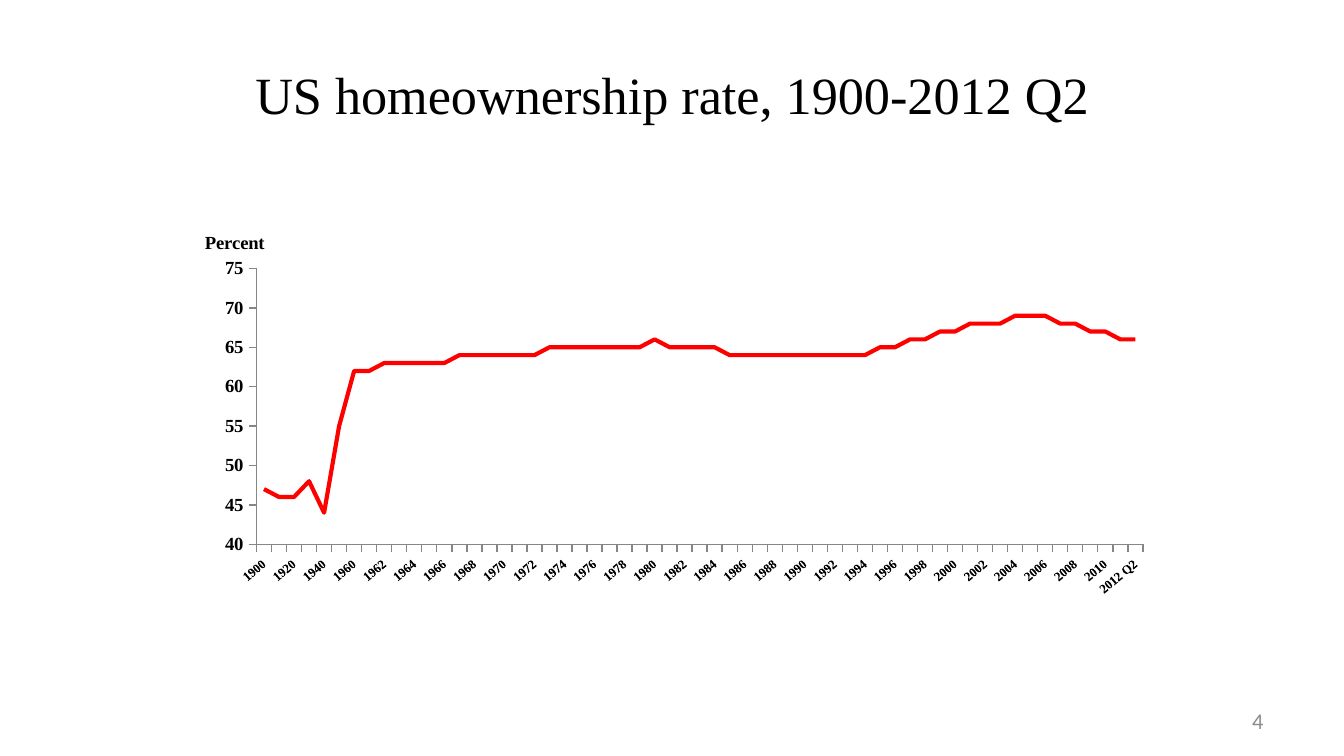
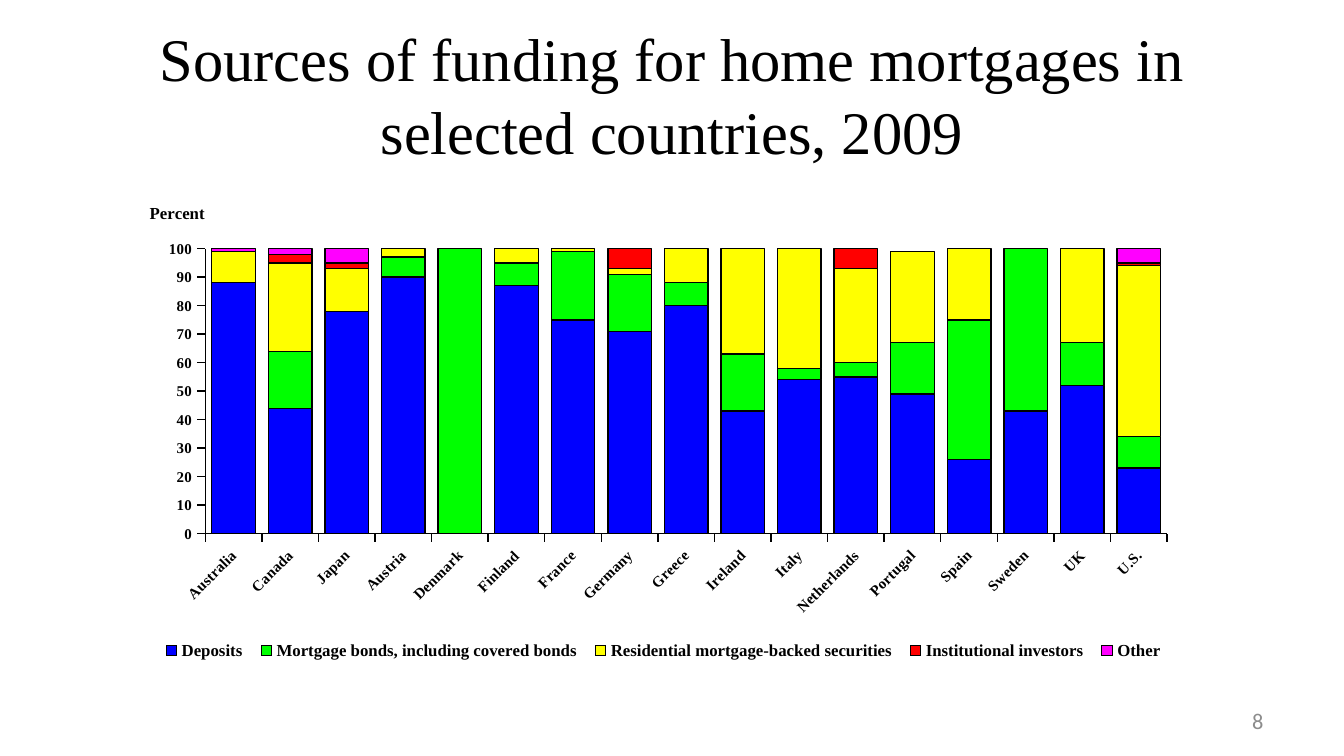
from dataclasses import dataclass

from lxml import etree
from pptx import Presentation
from pptx.chart.data import CategoryChartData
from pptx.dml.color import RGBColor
from pptx.enum.chart import XL_CHART_TYPE, XL_LEGEND_POSITION, XL_TICK_MARK
from pptx.enum.text import MSO_ANCHOR, MSO_AUTO_SIZE, PP_ALIGN
from pptx.oxml.ns import qn
from pptx.util import Cm, Pt

LINE = XL_CHART_TYPE.LINE
STACKED = XL_CHART_TYPE.COLUMN_STACKED
BOTTOM = XL_LEGEND_POSITION.BOTTOM
OUTSIDE = XL_TICK_MARK.OUTSIDE
NO_TICK = XL_TICK_MARK.NONE
MIDDLE = MSO_ANCHOR.MIDDLE
NO_AUTOFIT = MSO_AUTO_SIZE.NONE
CENTER, RIGHT = PP_ALIGN.CENTER, PP_ALIGN.RIGHT
TITLE_ONLY = 5


@dataclass(frozen=True)
class Theme:
    serif: str = "Times New Roman"
    sans: str = "Calibri"
    ink: str = "000000"
    number: str = "8C8C8C"
    axis: str = "868686"
    red: str = "FF0000"
    blue: str = "0000FF"
    green: str = "00FF00"
    yellow: str = "FFFF00"
    magenta: str = "FF00FF"
    rate_title: float = 28
    funding_title: float = 32.4
    page: float = 12
    rate_labels: float = 10
    rate_years: float = 7
    funding_labels: float = 8
    funding_captions: float = 9
    rate_line: float = 2.25
    thin_line: float = 0.75


THEME = Theme()

# Boxes in centimetres: left, top, width, height
SLIDE_SIZE = (25.4, 14.29)
TITLE_BOX = (1.27, 0.58, 22.86, 2.39)
PAGE_BOX = (18.21, 13.25, 5.92, 0.76)
RATE_BOX = (3.81, 4.29, 18.21, 6.98)
FUNDING_BOX = (2.34, 3.5, 20.52, 9.68)

# Homeownership: every census year to 1950, then every year
YEARS = [str(y) for y in (*range(1900, 1960, 10), *range(1960, 2012))] + ["2012 Q2"]
RATES = [
    47, 46, 46, 48, 44, 55,
    62, 62, 63, 63, 63, 63, 63, 64, 64, 64,
    64, 64, 64, 65, 65, 65, 65, 65, 65, 65,
    66, 65, 65, 65, 65, 64, 64, 64, 64, 64,
    64, 64, 64, 64, 64, 65, 65, 66, 66, 67,
    67, 68, 68, 68, 69, 69, 69, 68, 68, 67,
    67, 66, 66,
]

COUNTRIES = [
    "Australia", "Canada", "Japan", "Austria", "Denmark", "Finland",
    "France", "Germany", "Greece", "Ireland", "Italy", "Netherlands",
    "Portugal", "Spain", "Sweden", "UK", "U.S.",
]
FUNDING = [
    ("Deposits", THEME.blue,
     [88, 44, 78, 90, 0, 87, 75, 71, 80, 43, 54, 55, 49, 26, 43, 52, 23]),
    ("Mortgage bonds, including covered bonds", THEME.green,
     [0, 20, 0, 7, 100, 8, 24, 20, 8, 20, 4, 5, 18, 49, 57, 15, 11]),
    ("Residential mortgage-backed securities", THEME.yellow,
     [11, 31, 15, 3, 0, 6, 2, 2, 12, 37, 42, 33, 32, 25, 0, 34, 60]),
    ("Institutional investors", THEME.red,
     [0, 3, 2, 0, 0, 0, 0, 8, 0, 0, 0, 8, 0, 0, 0, 0, 1]),
    ("Other", THEME.magenta,
     [1, 3, 6, 0, 0, 0, 0, 0, 0, 0, 0, 0, 0, 0, 0, 0, 6]),
]


def lengths(box):
    return [Cm(value) for value in box]


def style_font(font, size, face=THEME.serif, color=THEME.ink, bold=False):
    font.name, font.size, font.bold = face, Pt(size), bold
    font.color.rgb = RGBColor.from_string(color)


def style_line(line, color, width):
    line.color.rgb = RGBColor.from_string(color)
    line.width = Pt(width)


def fill_text(frame, text, align):
    frame.text = text
    frame.word_wrap = True
    frame.auto_size = NO_AUTOFIT
    frame.vertical_anchor = MIDDLE
    frame.paragraphs[0].alignment = align
    return frame.paragraphs[0].runs[0].font


def add_titled_slide(prs, title, title_size, page):
    slide = prs.slides.add_slide(prs.slide_layouts[TITLE_ONLY])
    heading = slide.shapes.title
    heading.left, heading.top, heading.width, heading.height = lengths(TITLE_BOX)
    style_font(fill_text(heading.text_frame, title, CENTER), title_size)

    page_box = slide.shapes.add_textbox(*lengths(PAGE_BOX))
    page_font = fill_text(page_box.text_frame, page, RIGHT)
    style_font(page_font, THEME.page, THEME.sans, THEME.number)
    return slide


def set_layout(parent, index, inner=False, **fractions):
    """Fix a chart part at fractions of the chart box."""
    for old in parent.findall(qn("c:layout")):
        parent.remove(old)
    layout = etree.Element(qn("c:layout"))
    manual = etree.SubElement(layout, qn("c:manualLayout"))
    settings = {"layoutTarget": "inner"} if inner else {}
    settings.update(xMode="edge", yMode="edge", **fractions)
    for tag, value in settings.items():
        etree.SubElement(manual, qn("c:" + tag)).set("val", str(value))
    parent.insert(index, layout)


def add_percent_chart(slide, box, kind, categories, series, size, plot):
    data = CategoryChartData(number_format="0")
    data.categories = categories
    for name, _, values in series:
        data.add_series(name, values)
    chart = slide.shapes.add_chart(kind, *lengths(box), data).chart
    chart.has_title = chart.has_legend = False
    style_font(chart.font, size, bold=True)
    chart.plots[0].vary_by_categories = False
    set_layout(chart._chartSpace.chart.plotArea, 0, inner=True, **plot)
    return chart


def style_axis(axis, size, color):
    axis.has_major_gridlines = False
    axis.major_tick_mark, axis.minor_tick_mark = OUTSIDE, NO_TICK
    style_line(axis.format.line, color, THEME.thin_line)
    style_font(axis.tick_labels.font, size, bold=True)


def style_value_axis(axis, size, color, low, high, step):
    style_axis(axis, size, color)
    axis.minimum_scale, axis.maximum_scale, axis.major_unit = low, high, step
    axis.tick_labels.number_format = "0"
    axis.tick_labels.number_format_is_linked = False


def style_category_axis(axis, size, color, degrees, label_step=1):
    style_axis(axis, size, color)
    body = axis._element.find(qn("c:txPr")).find(qn("a:bodyPr"))
    body.set("rot", str(-degrees * 60000))
    body.set("vert", "horz")
    last = axis._element.find(qn("c:noMultiLvlLbl"))
    for tag, step in (("c:tickLblSkip", label_step), ("c:tickMarkSkip", 1)):
        skip = etree.Element(qn(tag))
        skip.set("val", str(step))
        last.addprevious(skip)


def add_percent_caption(axis, size, x, y):
    caption = axis.axis_title
    caption.text_frame.text = "Percent"
    style_font(caption.text_frame.paragraphs[0].runs[0].font, size, bold=True)
    body = caption.text_frame._txBody.find(qn("a:bodyPr"))
    body.set("rot", "0")
    body.set("vert", "horz")
    set_layout(caption._element, 1, x=x, y=y)


def homeownership_slide(prs):
    slide = add_titled_slide(prs, "US homeownership rate, 1900-2012 Q2",
                             THEME.rate_title, "4")
    chart = add_percent_chart(slide, RATE_BOX, LINE, YEARS,
                              [("Series 1", THEME.red, RATES)], THEME.rate_labels,
                              dict(x=0.057, y=0.114, w=0.92, h=0.757))
    style_category_axis(chart.category_axis, THEME.rate_years, THEME.axis, 40, 2)
    style_value_axis(chart.value_axis, THEME.rate_labels, THEME.axis, 40, 75, 5)
    add_percent_caption(chart.value_axis, THEME.rate_labels, 0, 0)

    rate = chart.plots[0].series[0]
    rate.smooth = False
    style_line(rate.format.line, THEME.red, THEME.rate_line)


def funding_slide(prs):
    slide = add_titled_slide(
        prs, "Sources of funding for home mortgages in selected countries, 2009",
        THEME.funding_title, "8")
    chart = add_percent_chart(slide, FUNDING_BOX, STACKED, COUNTRIES, FUNDING,
                              THEME.funding_labels,
                              dict(x=0.075, y=0.124, w=0.886, h=0.557))
    style_category_axis(chart.category_axis, THEME.funding_labels, THEME.ink, 45)
    style_value_axis(chart.value_axis, THEME.funding_labels, THEME.ink, 0, 100, 10)
    add_percent_caption(chart.value_axis, THEME.funding_captions, 0.021, 0.028)

    # Stacked sources
    bars = chart.plots[0]
    bars.gap_width, bars.overlap = 30, 100
    for source, (_, color, _) in zip(bars.series, FUNDING):
        source.format.fill.solid()
        source.format.fill.fore_color.rgb = RGBColor.from_string(color)
        style_line(source.format.line, THEME.ink, THEME.thin_line)

    # Legend under the countries
    chart.has_legend = True
    chart.legend.position = BOTTOM
    chart.legend.include_in_layout = False
    style_font(chart.legend.font, THEME.funding_captions, bold=True)
    set_layout(chart.legend._element, 1, x=0.027, y=0.874, w=0.94, h=0.07)


def main():
    prs = Presentation()
    prs.slide_width, prs.slide_height = lengths(SLIDE_SIZE)
    homeownership_slide(prs)
    funding_slide(prs)
    prs.save("out.pptx")


if __name__ == "__main__":
    main()
